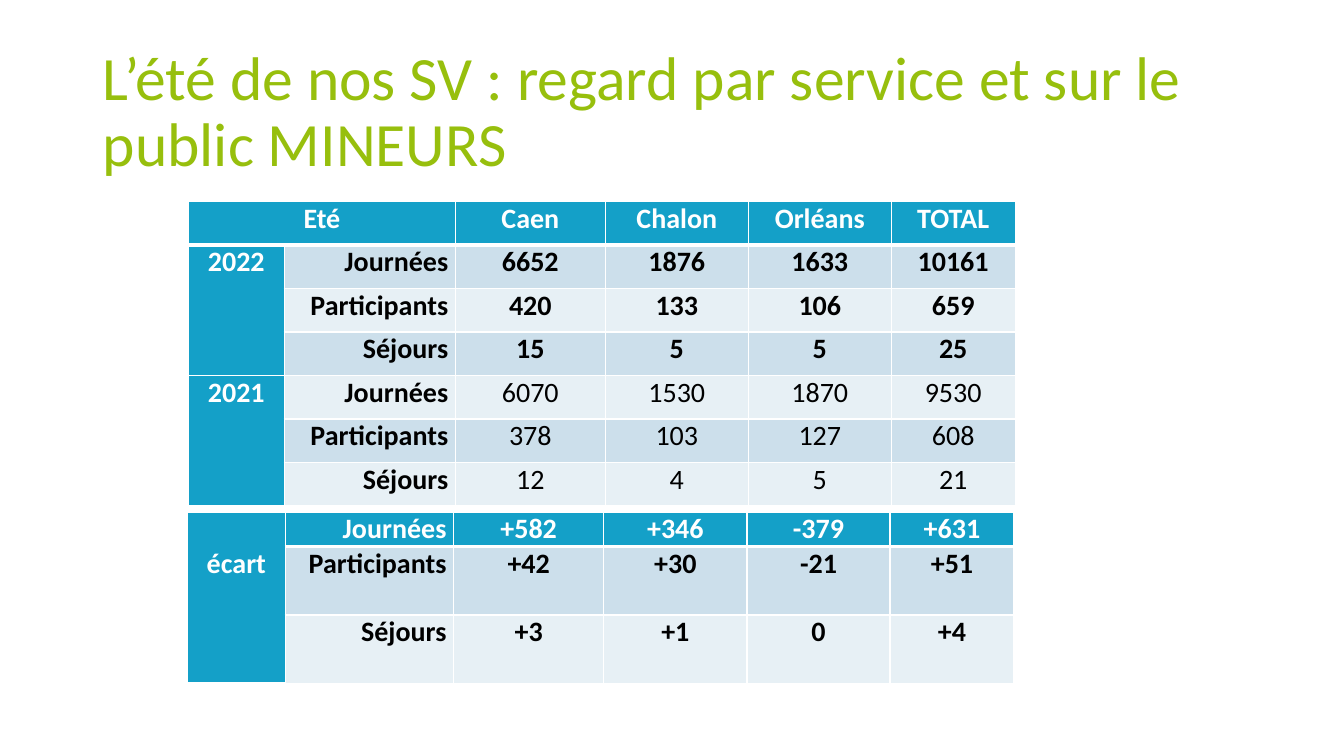
from lxml.etree import SubElement
from pptx import Presentation
from pptx.dml.color import RGBColor
from pptx.enum.text import MSO_ANCHOR, MSO_AUTO_SIZE, PP_ALIGN
from pptx.oxml.ns import qn
from pptx.util import Inches, Pt

SLIDE_WIDTH, SLIDE_HEIGHT = Inches(13.33), Inches(7.5)
COLUMN, ROW = SLIDE_WIDTH / 100, SLIDE_HEIGHT / 100

GREEN = RGBColor(0x97, 0xBF, 0x0D)
BLUE = RGBColor(0x14, 0xA0, 0xC8)
BAND_DARK = RGBColor(0xCC, 0xDF, 0xEB)
BAND_LIGHT = RGBColor(0xE7, 0xF0, 0xF5)
WHITE = RGBColor(0xFF, 0xFF, 0xFF)
BLACK = RGBColor(0, 0, 0)

TITLE = "L’été de nos SV : regard par service et sur le public MINEURS"
SUMMER = [
    ["Eté", "", "Caen", "Chalon", "Orléans", "TOTAL"],
    ["2022", "Journées", "6652", "1876", "1633", "10161"],
    ["", "Participants", "420", "133", "106", "659"],
    ["", "Séjours", "15", "5", "5", "25"],
    ["2021", "Journées", "6070", "1530", "1870", "9530"],
    ["", "Participants", "378", "103", "127", "608"],
    ["", "Séjours", "12", "4", "5", "21"],
]
GAP = [
    ["écart", "Journées", "+582", "+346", "-379", "+631"],
    ["", "Participants", "+42", "+30", "-21", "+51"],
    ["", "Séjours", "+3", "+1", "0", "+4"],
]


def grid_box(left, top, width, height):
    return [round(left * COLUMN), round(top * ROW),
            round(width * COLUMN), round(height * ROW)]


def apply_format(target, values):
    for name, value in values.items():
        setattr(target, name, value)


def set_font(font, size, color, bold=False):
    apply_format(font, {"name": "Calibri", "size": Pt(size), "bold": bold})
    font.color.rgb = color


def add_title(slide, box):
    title = slide.shapes.title
    apply_format(title, dict(zip(("left", "top", "width", "height"), box)))
    apply_format(title.text_frame, {
        "text": TITLE, "word_wrap": True, "auto_size": MSO_AUTO_SIZE.NONE,
        "vertical_anchor": MSO_ANCHOR.MIDDLE})
    heading = title.text_frame.paragraphs[0]
    apply_format(heading, {"alignment": PP_ALIGN.LEFT, "line_spacing": 0.9})
    set_font(heading.font, 44, GREEN)


def add_borders(cell, widths):
    properties = cell._tc.get_or_add_tcPr()
    for side, width in widths.items():
        border = SubElement(properties, qn(f"a:ln{side}"), w=str(Pt(width)))
        SubElement(SubElement(border, qn("a:solidFill")), qn("a:srgbClr"), val=str(WHITE))


def add_figures(slide, box, figures, column_shares, row_shares, merges, plain_rows=()):
    table = slide.shapes.add_table(len(figures), len(column_shares), *box).table
    for column, share in zip(table.columns, column_shares):
        column.width = round(box[2] * share / sum(column_shares))
    for row, share in zip(table.rows, row_shares):
        row.height = round(box[3] * share / sum(row_shares))
    for first, last in merges:
        table.cell(*first).merge(table.cell(*last))

    for r, line in enumerate(figures):
        for c, wording in enumerate(line):
            cell = table.cell(r, c)
            heading = r == 0 or c == 0
            add_borders(cell, {"L": 1, "R": 1, "T": 3 if r == 1 else 1, "B": 3 if r == 0 else 1})
            cell.fill.solid()
            cell.fill.fore_color.rgb = BLUE if heading else BAND_DARK if r % 2 else BAND_LIGHT
            apply_format(cell, {"margin_left": Inches(0.07), "margin_right": Inches(0.07),
                                "margin_top": 0, "margin_bottom": 0})
            entry = cell.text_frame.paragraphs[0]
            if wording:
                entry.text = wording
            entry.alignment = PP_ALIGN.RIGHT if c == 1 else PP_ALIGN.CENTER
            set_font(entry.font, 20, WHITE if heading else BLACK,
                     bold=c < 2 or r not in plain_rows)
    return table


def add_summer(slide, box):
    add_figures(slide, box, SUMMER, [0.95, 1.7, 1.49, 1.42, 1.42, 1.23], [1] * 7,
                [((0, 0), (0, 1)), ((1, 0), (3, 0)), ((4, 0), (6, 0))], plain_rows=(4, 5, 6))


def add_gap(slide, box):
    table = add_figures(slide, box, GAP, [0.97, 1.67, 1.49, 1.42, 1.42, 1.23], [1, 2, 2],
                        [((0, 0), (2, 0))])
    table.cell(0, 0).margin_top = table.rows[0].height


def main():
    presentation = Presentation()
    apply_format(presentation, {"slide_width": SLIDE_WIDTH, "slide_height": SLIDE_HEIGHT})
    slide = presentation.slides.add_slide(presentation.slide_layouts.get_by_name("Title Only"))
    add_title(slide, grid_box(6.9, 5.33, 89.27, 19.33))
    add_summer(slide, grid_box(14.03, 26.67, 61.51, 40.27))
    add_gap(slide, grid_box(13.95, 67.73, 61.51, 22.67))
    presentation.save("out.pptx")


if __name__ == "__main__":
    main()
